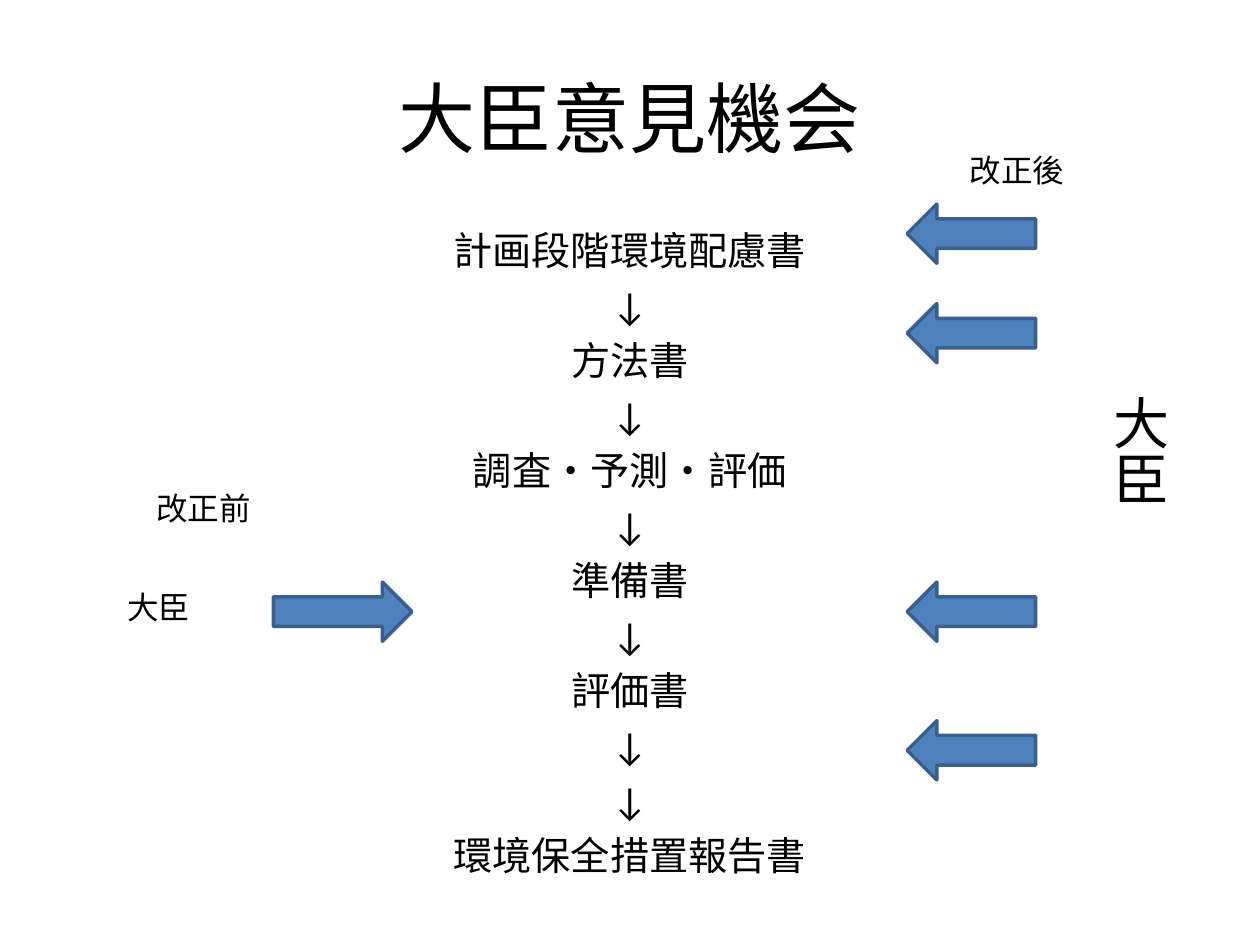
from pptx import Presentation
from pptx.dml.color import RGBColor
from pptx.enum.shapes import MSO_SHAPE as Shape
from pptx.enum.text import MSO_ANCHOR as Anchor, PP_ALIGN as Align
from pptx.util import Inches, Pt

COLORS = {"text": "000000", "arrow": "4F81BD", "arrow_line": "3A5F8C"}
FONT = "Calibri"
STEPS = ["計画段階環境配慮書", "方法書", "調査・予測・評価", "準備書", "評価書"]
FINAL_STEP = "環境保全措置報告書"
ARROW_HEIGHT = 0.47
DRAFT_TOP = 4.62  # level of 準備書, shared by both sides


def add_text(slide, box, lines, size, align=Align.LEFT):
    """Add a text box with one paragraph per line and return its frame."""
    frame = slide.shapes.add_textbox(*map(Inches, box)).text_frame
    frame.word_wrap = True
    frame.text = "\n".join(lines)
    for paragraph in frame.paragraphs:
        paragraph.alignment = align
        for run in paragraph.runs:
            run.font.name = FONT
            run.font.size = Pt(size)
            run.font.color.rgb = RGBColor.from_string(COLORS["text"])
    return frame


def add_arrow(slide, kind, left, top, width):
    arrow = slide.shapes.add_shape(
        kind, Inches(left), Inches(top), Inches(width), Inches(ARROW_HEIGHT))
    arrow.shadow.inherit = False
    arrow.fill.solid()
    arrow.fill.fore_color.rgb = RGBColor.from_string(COLORS["arrow"])
    arrow.line.color.rgb = RGBColor.from_string(COLORS["arrow_line"])
    arrow.line.width = Pt(2)


def add_title(slide, box):
    frame = add_text(slide, box, ["大臣意見機会"], 44, Align.CENTER)
    frame.vertical_anchor = Anchor.MIDDLE


def add_procedure(slide, box):
    """List the assessment steps with a down arrow after each."""
    lines = [line for step in STEPS for line in (step, "↓")]
    frame = add_text(slide, box, lines + ["↓", FINAL_STEP], 22.4, Align.CENTER)
    for paragraph in frame.paragraphs:
        paragraph.line_spacing = Pt(26.9)
        paragraph.space_before = Pt(4.5)


def add_before_revision(slide, left, top):
    add_text(slide, (left + 0.23, top, 1.65, 0.4), ["改正前"], 18)
    add_text(slide, (left, DRAFT_TOP, 0.79, 0.4), ["大臣"], 18)
    add_arrow(slide, Shape.RIGHT_ARROW, left + 1.26, DRAFT_TOP, 1.1)


def add_after_revision(slide, left, top):
    add_text(slide, (left + 0.4, top, 1.5, 0.4), ["改正後"], 18)
    for arrow_top in (1.62, 2.41, DRAFT_TOP, 5.72):
        add_arrow(slide, Shape.LEFT_ARROW, left, arrow_top, 1.02)
    minister = add_text(
        slide, (left + 1.42, top + 1.89, 0.74, 1.1), ["大臣"], 32)
    minister._txBody.bodyPr.set("vert", "eaVert")


def main():
    presentation = Presentation()
    presentation.slide_width = Inches(10)
    presentation.slide_height = Inches(7.5)
    slide = presentation.slides.add_slide(presentation.slide_layouts[6])
    add_title(slide, (0.5, 0.3, 9, 1.25))
    add_procedure(slide, (0.5, 1.75, 9, 4.95))
    add_before_revision(slide, 0.91, 3.83)
    add_after_revision(slide, 7.2, 1.15)
    presentation.save("out.pptx")


if __name__ == "__main__":
    main()
